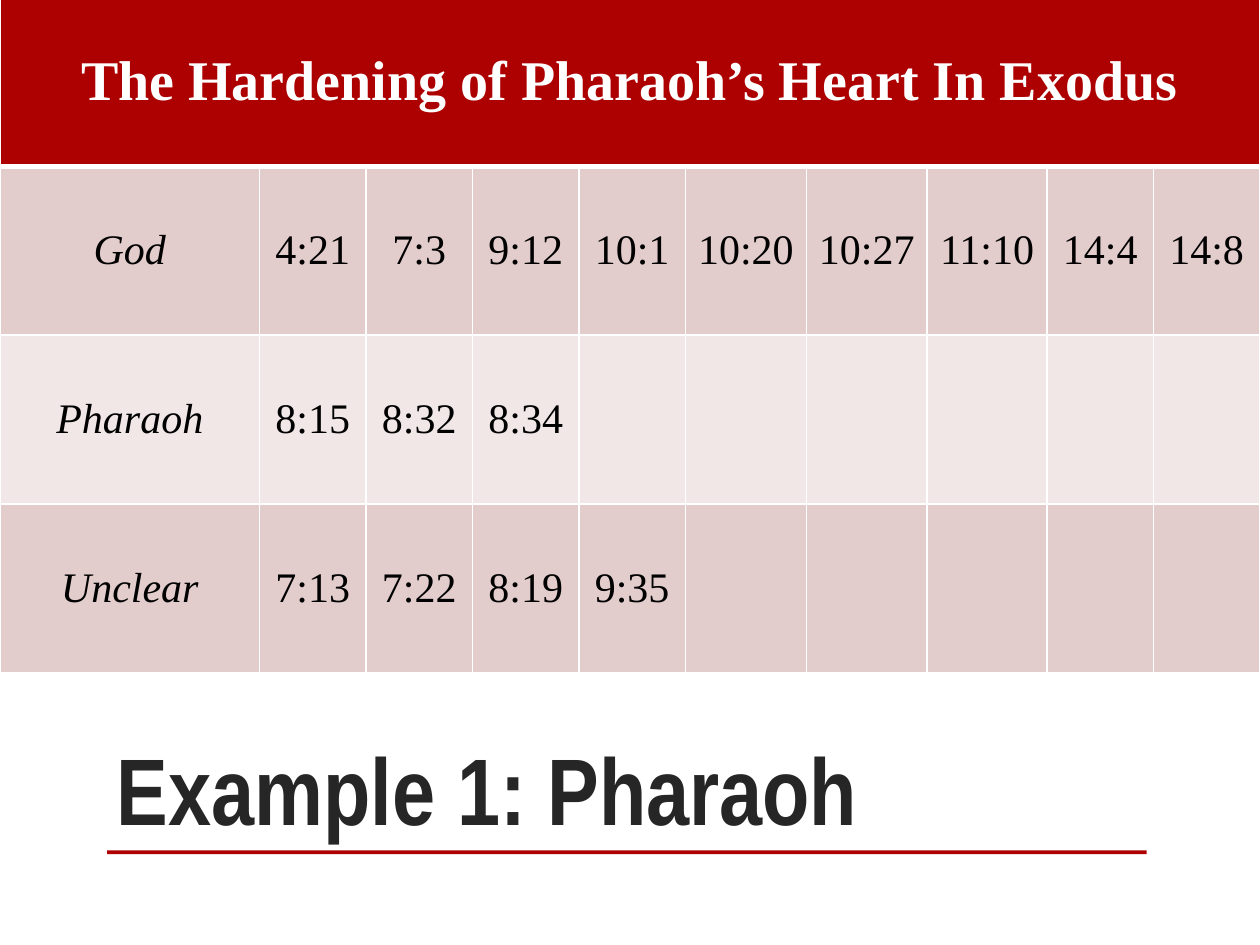
from dataclasses import dataclass

from lxml.etree import SubElement
from pptx import Presentation
from pptx.dml.color import RGBColor as Rgb
from pptx.enum.shapes import MSO_SHAPE as Shape
from pptx.enum.text import MSO_ANCHOR as Anchor, PP_ALIGN as Align
from pptx.oxml.ns import qn
from pptx.util import Inches, Pt


@dataclass(frozen=True)
class Theme:
    accent: str = "AD0101"
    band_dark: str = "E3CCCC"
    band_light: str = "F1E7E7"
    white: str = "FFFFFF"
    black: str = "000000"
    title_color: str = "262626"
    title_font: str = "Arial Narrow"
    table_font: str = "Times New Roman"
    title_size: int = 54
    header_size: int = 32
    body_size: int = 24
    grid_width: int = 1
    header_rule: int = 3


THEME = Theme()

HEADER = "The Hardening of Pharaoh’s Heart In Exodus"
VERSES = {
    "God": ["4:21", "7:3", "9:12", "10:1", "10:20", "10:27", "11:10", "14:4", "14:8"],
    "Pharaoh": ["8:15", "8:32", "8:34"],
    "Unclear": ["7:13", "7:22", "8:19", "9:35"],
}

# The short verse columns share what the wider ones leave of the slide width
PAGE_WIDTH = 10
LABEL_WIDTH = 2.06
WIDE_COLUMNS = {5: 0.96, 6: 0.96, 7: 0.95}
COLUMN_COUNT = 10
SHORT_WIDTH = (PAGE_WIDTH - LABEL_WIDTH - sum(WIDE_COLUMNS.values())) / 6
ROW_HEIGHT = 1.34


def write(frame, text, color, align=Align.LEFT, **font_format):
    para = frame.paragraphs[0]
    para.alignment = align
    span = para.add_run()
    span.text = text
    span.font.color.rgb = Rgb.from_string(color)
    for name, value in font_format.items():
        setattr(span.font, name, value)


def set_borders(cell, **widths):
    props = cell._tc.get_or_add_tcPr()
    for side in "LRTB":
        width = widths.get(side, THEME.grid_width)
        line = SubElement(props, qn(f"a:ln{side}"), w=str(Pt(width)))
        fill = SubElement(line, qn("a:solidFill"))
        SubElement(fill, qn("a:srgbClr"), val=THEME.white)


def style_cell(cell, fill, **border_widths):
    set_borders(cell, **border_widths)
    cell.fill.solid()
    cell.fill.fore_color.rgb = Rgb.from_string(fill)
    cell.vertical_anchor = Anchor.MIDDLE


def add_verse_table(page):
    row_count = len(VERSES) + 1
    table = page.shapes.add_table(
        row_count, COLUMN_COUNT, Inches(0), Inches(-0.02),
        Inches(PAGE_WIDTH), Inches(ROW_HEIGHT * row_count),
    ).table
    for index, column in enumerate(table.columns):
        width = WIDE_COLUMNS.get(index, SHORT_WIDTH) if index else LABEL_WIDTH
        column.width = Inches(width)
    for row in table.rows:
        row.height = Inches(ROW_HEIGHT)

    # Header across all columns
    for cell in table.rows[0].cells:
        style_cell(cell, THEME.accent, B=THEME.header_rule)
    header = table.cell(0, 0)
    header.merge(table.cell(0, COLUMN_COUNT - 1))
    write(header.text_frame, HEADER, THEME.white, Align.CENTER,
          name=THEME.table_font, size=Pt(THEME.header_size), bold=True)

    # One banded row per agent
    for row, (agent, verses) in enumerate(VERSES.items(), start=1):
        band = THEME.band_dark if row % 2 else THEME.band_light
        top = THEME.header_rule if row == 1 else THEME.grid_width
        for cell in table.rows[row].cells:
            style_cell(cell, band, T=top)
        for column, text in enumerate([agent, *verses]):
            write(table.cell(row, column).text_frame, text, THEME.black, Align.CENTER,
                  name=THEME.table_font, size=Pt(THEME.body_size),
                  bold=False, italic=column == 0)


def add_title(page, text):
    box = page.shapes.add_textbox(Inches(0.83), Inches(5), Inches(7.42), Inches(1.75))
    frame = box.text_frame
    frame.word_wrap = True
    frame.vertical_anchor = Anchor.BOTTOM
    write(frame, text, THEME.title_color,
          name=THEME.title_font, size=Pt(THEME.title_size), bold=True)


def add_title_rule(page):
    rule = page.shapes.add_shape(
        Shape.RECTANGLE, Inches(0.85), Inches(6.75), Inches(8.25), Inches(0.03))
    rule.shadow.inherit = False
    rule.fill.solid()
    rule.fill.fore_color.rgb = Rgb.from_string(THEME.accent)
    rule.line.fill.background()


def main():
    deck = Presentation()
    deck.slide_width, deck.slide_height = Inches(PAGE_WIDTH), Inches(7.5)
    page = deck.slides.add_slide(deck.slide_layouts[6])
    add_title_rule(page)
    add_title(page, "Example 1: Pharaoh")
    add_verse_table(page)
    deck.save("out.pptx")


if __name__ == "__main__":
    main()
